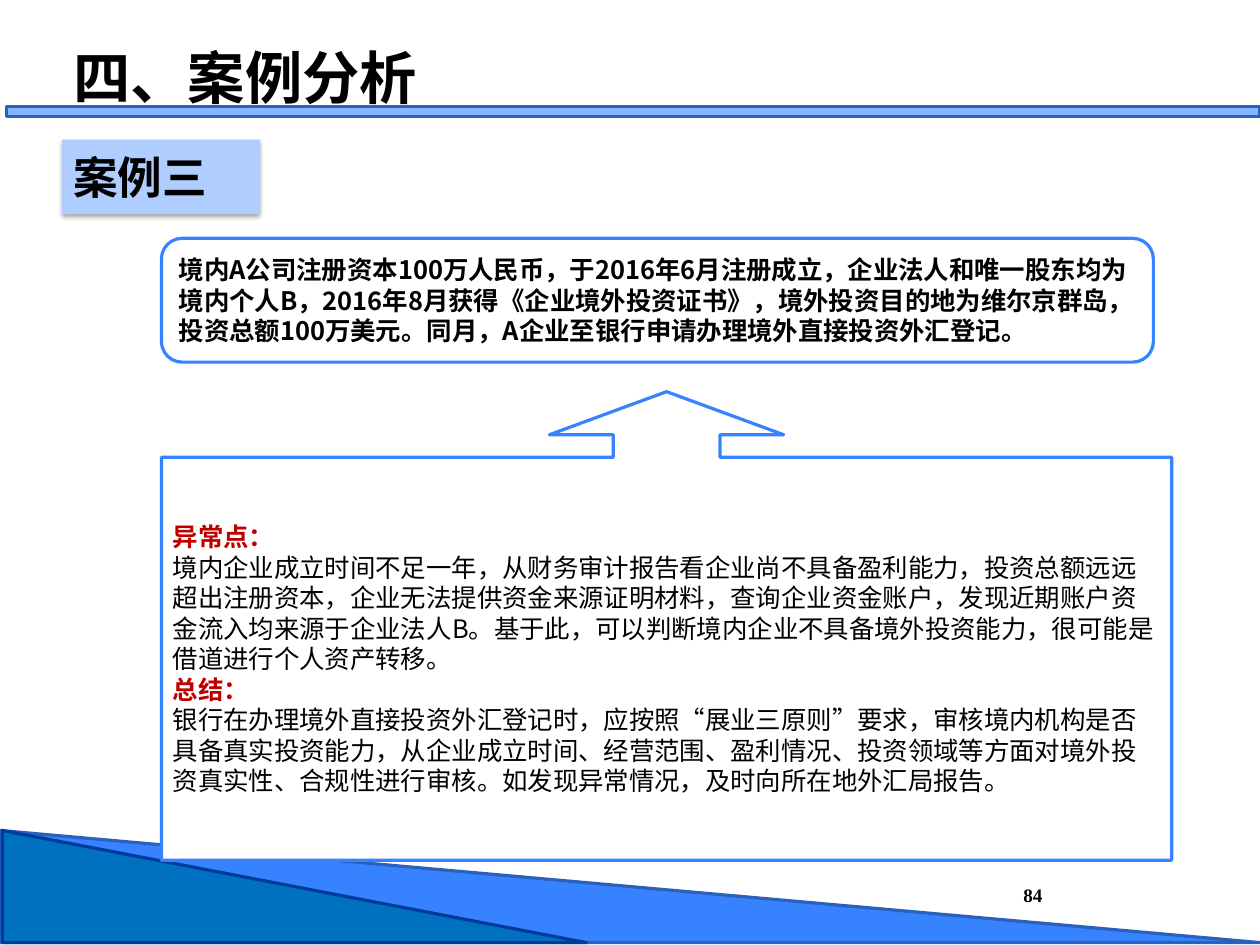
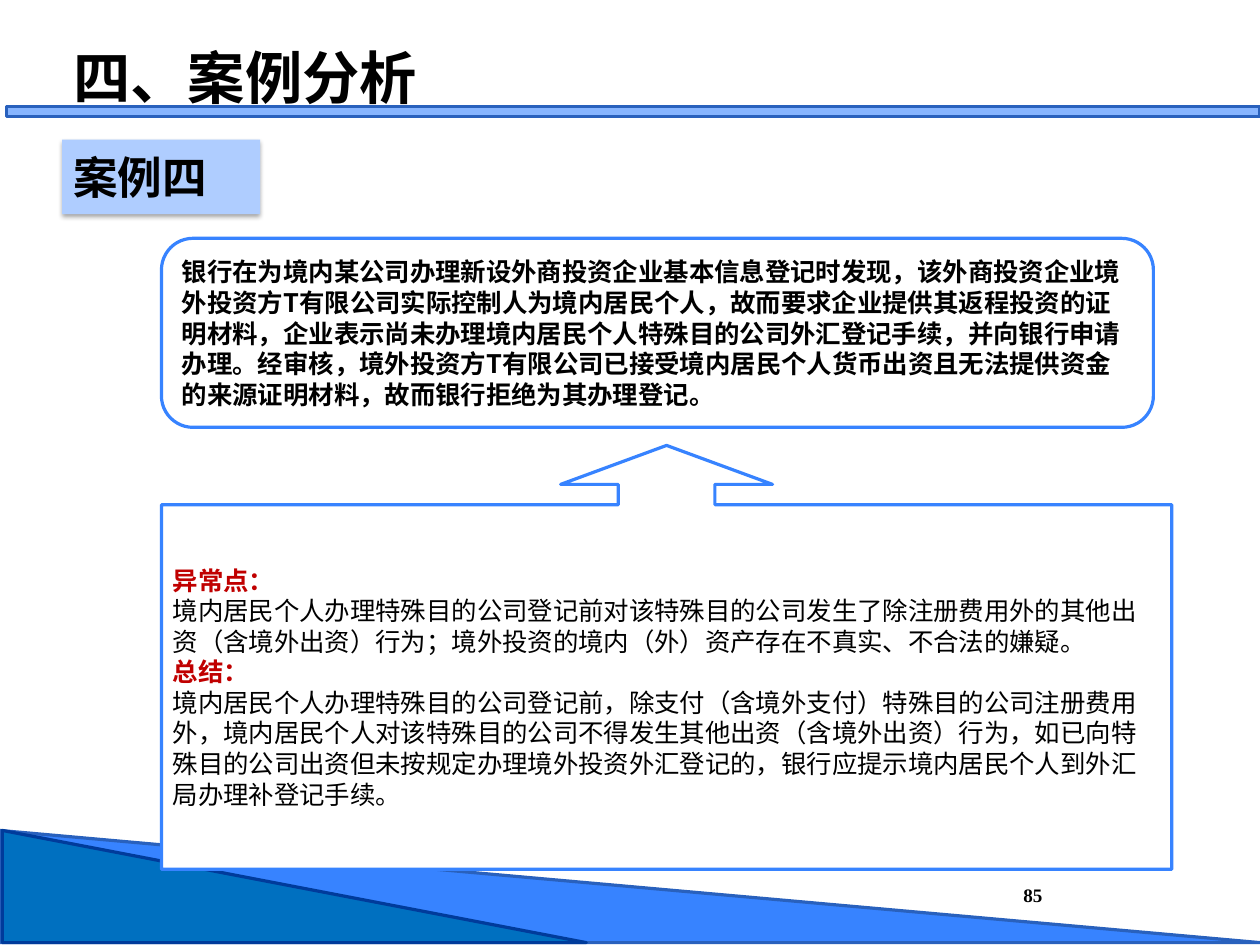
from lxml import etree
from pptx import Presentation
from pptx import util as u
from pptx.dml.color import RGBColor
from pptx.enum import shapes, text
from pptx.oxml import ns

BLACK = RGBColor(0x00, 0x00, 0x00)
WHITE = RGBColor(0xFF, 0xFF, 0xFF)
RED = RGBColor(0xC0, 0x00, 0x00)
BLUE = RGBColor(0x37, 0x83, 0xFF)
BLUE_EDGE = RGBColor(0x29, 0x61, 0xBD)
DEEP = RGBColor(0x00, 0x70, 0xC0)
DEEP_EDGE = RGBColor(0x00, 0x3B, 0x9B)
RULE = RGBColor(0x87, 0xB5, 0xFF)
LABEL = RGBColor(0xAF, 0xCD, 0xFF)

SANS = "Noto Sans CJK SC"
SERIF = "Times New Roman"
KIND = shapes.MSO_SHAPE
ANCHOR = text.MSO_ANCHOR
ALIGN = text.PP_ALIGN

LEFT = 101.5
FACTS_TOP = 149.8
FACTS_WIDTH = 623.5
CALLOUT_WIDTH = 635
CALLOUT_ADJUSTMENTS = (0.228, 0.25, 0.092, 0.86)

CASES = [
    dict(
        page="84",
        label="案例三",
        facts="境内A公司注册资本100万人民币，于2016年6月注册成立，企业法人和唯一股东均为境内个人B，2016年8月获得《企业境外投资证书》，境外投资目的地为维尔京群岛，投资总额100万美元。同月，A企业至银行申请办理境外直接投资外汇登记。",
        facts_height=77.8,
        anomaly="境内企业成立时间不足一年，从财务审计报告看企业尚不具备盈利能力，投资总额远远超出注册资本，企业无法提供资金来源证明材料，查询企业资金账户，发现近期账户资金流入均来源于企业法人B。基于此，可以判断境内企业不具备境外投资能力，很可能是借道进行个人资产转移。",
        summary="银行在办理境外直接投资外汇登记时，应按照“展业三原则”要求，审核境内机构是否具备真实投资能力，从企业成立时间、经营范围、盈利情况、投资领域等方面对境外投资真实性、合规性进行审核。如发现异常情况，及时向所在地外汇局报告。",
        callout_top=246.2,
        callout_height=294.5,
    ),
    dict(
        page="85",
        label="案例四",
        facts="银行在为境内某公司办理新设外商投资企业基本信息登记时发现，该外商投资企业境外投资方T有限公司实际控制人为境内居民个人，故而要求企业提供其返程投资的证明材料，企业表示尚未办理境内居民个人特殊目的公司外汇登记手续，并向银行申请办理。经审核，境外投资方T有限公司已接受境内居民个人货币出资且无法提供资金的来源证明材料，故而银行拒绝为其办理登记。",
        facts_height=118.8,
        anomaly="境内居民个人办理特殊目的公司登记前对该特殊目的公司发生了除注册费用外的其他出资（含境外出资）行为；境外投资的境内（外）资产存在不真实、不合法的嫌疑。",
        summary="境内居民个人办理特殊目的公司登记前，除支付（含境外支付）特殊目的公司注册费用外，境内居民个人对该特殊目的公司不得发生其他出资（含境外出资）行为，如已向特殊目的公司出资但未按规定办理境外投资外汇登记的，银行应提示境内居民个人到外汇局办理补登记手续。",
        callout_top=280,
        callout_height=266.4,
    ),
]


def write(sp, content, size=16, color=BLACK, bold=True, font=SANS,
          align=ALIGN.LEFT, anchor=ANCHOR.MIDDLE, first=True):
    """Write one paragraph into a shape, adding it after others unless first."""
    tf = sp.text_frame
    tf.word_wrap = True
    tf.vertical_anchor = anchor
    p = tf.paragraphs[0] if first else tf.add_paragraph()
    p.alignment = align
    r = p.add_run()
    r.text = content
    r.font.size = u.Pt(size)
    r.font.bold = bold
    r.font.color.rgb = color
    r.font.name = font
    ea = etree.SubElement(r.font._element, ns.qn("a:ea"))
    ea.set("typeface", font)


def add_box(s, kind, box, fill, line=None):
    """Add a filled preset shape without a shadow, outlined if line is given."""
    sp = s.shapes.add_shape(kind, *map(u.Pt, box))
    sp.shadow.inherit = False
    sp.fill.solid()
    sp.fill.fore_color.rgb = fill
    if line is None:
        sp.line.fill.background()
    else:
        sp.line.color.rgb = line
        sp.line.width = u.Pt(2)
    return sp


def add_shadow(sp, blur, distance, opacity):
    """Give a shape a soft black shadow straight below it."""
    effects = sp._element.spPr.find(ns.qn("a:effectLst"))
    shadow = etree.SubElement(effects, ns.qn("a:outerShdw"),
                              blurRad=str(u.Pt(blur)), dist=str(u.Pt(distance)),
                              dir="5400000", rotWithShape="0")
    color = etree.SubElement(shadow, ns.qn("a:srgbClr"), val=str(BLACK))
    etree.SubElement(color, ns.qn("a:alpha"), val=str(opacity * 1000))


def add_frame(s, page):
    """Add the corner bands, rule, page number and title all slides share."""
    add_box(s, KIND.RIGHT_TRIANGLE, (0, 522, 792, 70.5), BLUE, BLUE_EDGE)
    add_box(s, KIND.RIGHT_TRIANGLE, (1.5, 522, 367, 70.5), DEEP, DEEP_EDGE)
    add_box(s, KIND.RECTANGLE, (4.3, 67, 787.7, 6.5), RULE, BLUE_EDGE)
    number = s.shapes.add_textbox(*map(u.Pt, (623, 539.3, 32.3, 30.2)))
    tf = number.text_frame
    tf.margin_left = tf.margin_right = tf.margin_top = tf.margin_bottom = 0
    write(number, page, size=12, font=SERIF, align=ALIGN.RIGHT, anchor=ANCHOR.BOTTOM)
    title = s.shapes.add_textbox(*map(u.Pt, (39, 25.2, 471, 45.4)))
    write(title, "四、案例分析", size=36)


def add_label(s, content):
    """Add the shadowed label that names the case."""
    sp = add_box(s, KIND.RECTANGLE, (39, 87.8, 124.5, 46.8), LABEL)
    add_shadow(sp, blur=3.1, distance=1.8, opacity=35)
    write(sp, content, size=28)


def add_facts(s, content, height):
    """Add the rounded box with the facts of the case."""
    box = (LEFT, FACTS_TOP, FACTS_WIDTH, height)
    write(add_box(s, KIND.ROUNDED_RECTANGLE, box, WHITE, BLUE), content)


def add_findings(s, anomaly, summary, top, height):
    """Add the arrow callout with the anomaly and the summary."""
    box = (LEFT, top, CALLOUT_WIDTH, height)
    sp = add_box(s, KIND.UP_ARROW_CALLOUT, box, WHITE, BLUE)
    for i, value in enumerate(CALLOUT_ADJUSTMENTS):
        sp.adjustments[i] = value
    write(sp, "异常点：", color=RED)
    write(sp, anomaly, bold=False, first=False)
    write(sp, "总结：", color=RED, first=False)
    write(sp, summary, bold=False, first=False)


def main():
    """Build one slide per case and save the presentation."""
    prs = Presentation()
    prs.slide_width = u.Pt(792)
    prs.slide_height = u.Pt(594)
    for case in CASES:
        s = prs.slides.add_slide(prs.slide_layouts[6])
        add_frame(s, case["page"])
        add_label(s, case["label"])
        add_facts(s, case["facts"], case["facts_height"])
        add_findings(s, case["anomaly"], case["summary"],
                     case["callout_top"], case["callout_height"])
    prs.save("out.pptx")


if __name__ == "__main__":
    main()
